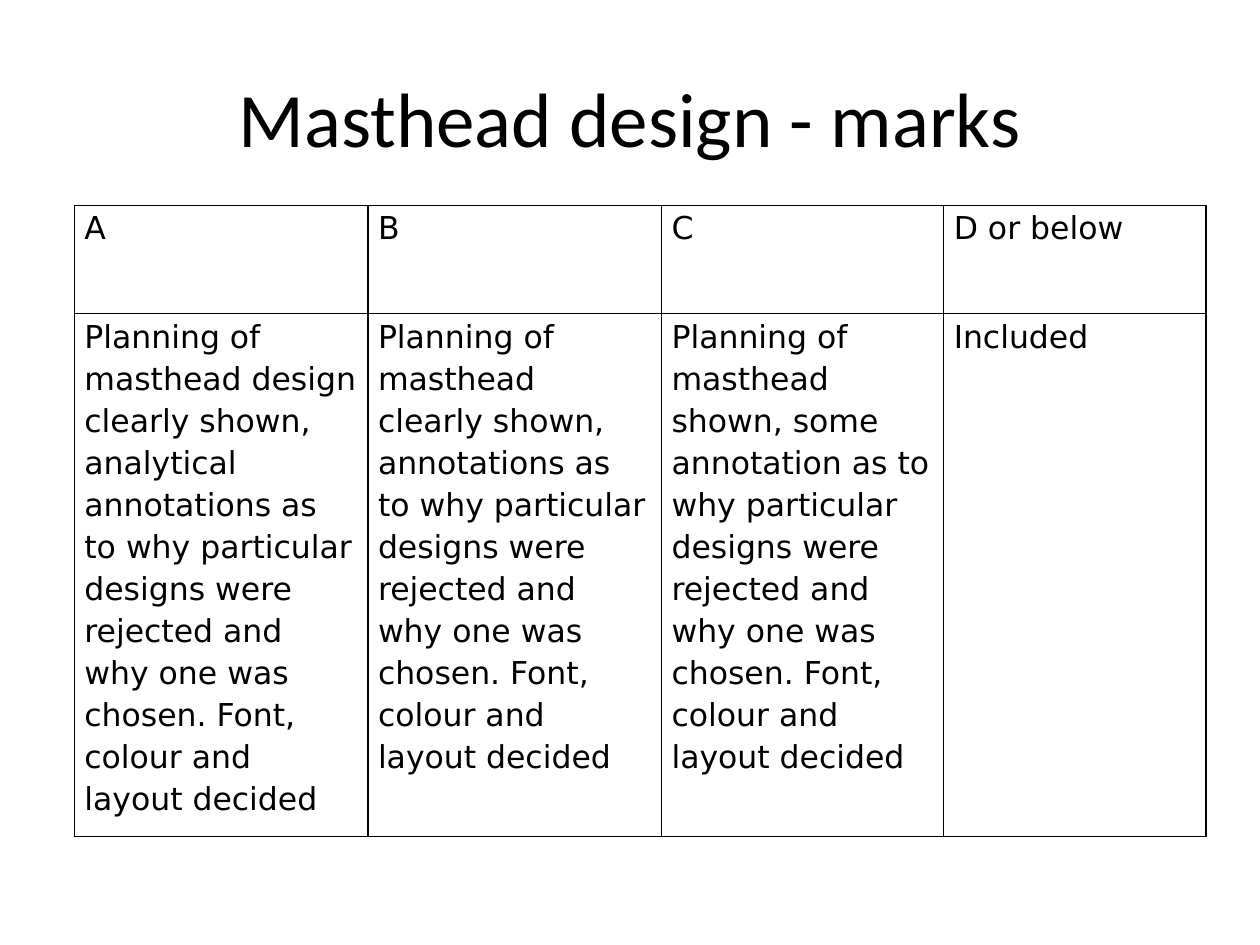
from dataclasses import dataclass

from lxml import etree
from pptx import Presentation
from pptx.dml.color import RGBColor
from pptx.enum.text import MSO_ANCHOR, PP_ALIGN
from pptx.oxml.ns import qn
from pptx.util import Inches, Pt

CENTER, LEFT = PP_ALIGN.CENTER, PP_ALIGN.LEFT
MIDDLE, TOP = MSO_ANCHOR.MIDDLE, MSO_ANCHOR.TOP


@dataclass(frozen=True)
class Theme:
    ink: str = "000000"
    paper: str = "FFFFFF"
    head: str = "Calibri"
    body: str = "DejaVu Sans"
    big: int = 44
    small: int = 18
    rule: int = 1


@dataclass(frozen=True)
class Grade:
    name: str
    width: float
    text: str


THEME = Theme()
ENDING = "particular designs were rejected and why one was chosen. Font, colour and layout decided"
GRADES = [
    Grade("A", 2.33, f"Planning of masthead design clearly shown, analytical annotations as to why {ENDING}"),
    Grade("B", 2.33, f"Planning of masthead clearly shown, annotations as to why {ENDING}"),
    Grade("C", 2.24, f"Planning of masthead shown, some annotation as to why {ENDING}"),
    Grade("D or below", 2.08, "Included"),
]
HEIGHTS = [0.86, 4.15]


def put_text(frame, text: str, *, font: str, size: int, align=LEFT,
             space: float = 1, after: float = 0, indent: float = 0) -> None:
    frame.word_wrap = True
    par = frame.paragraphs[0]
    par.alignment, par.line_spacing, par.space_after = align, space, Pt(after)
    if indent:
        props = par._p.get_or_add_pPr()
        props.set("marL", str(Inches(indent)))
        props.set("indent", "0")
    run = par.add_run()
    run.text = text
    run.font.name, run.font.size = font, Pt(size)
    run.font.color.rgb = RGBColor.from_string(THEME.ink)


def add_rules(cell) -> None:
    props = cell._tc.get_or_add_tcPr()
    for side in ("lnL", "lnR", "lnT", "lnB"):
        line = etree.SubElement(props, qn(f"a:{side}"), w=str(Pt(THEME.rule)))
        fill = etree.SubElement(line, qn("a:solidFill"))
        etree.SubElement(fill, qn("a:srgbClr"), val=THEME.ink)


def fill_cell(cell, text: str) -> None:
    cell.margin_left = cell.margin_top = cell.margin_bottom = 0
    cell.margin_right = Inches(0.09)
    cell.vertical_anchor = TOP
    add_rules(cell)
    cell.fill.solid()
    cell.fill.fore_color.rgb = RGBColor.from_string(THEME.paper)
    put_text(cell.text_frame, text, font=THEME.body, size=THEME.small,
             space=1.15, after=10, indent=0.08)


def add_title(slide, text: str) -> None:
    title = slide.shapes.title
    title.left, title.top = Inches(0.5), Inches(0.3)
    title.width, title.height = Inches(9), Inches(1.25)
    title.text_frame.vertical_anchor = MIDDLE
    put_text(title.text_frame, text, font=THEME.head, size=THEME.big, align=CENTER)


def add_grades(slide, grades: list[Grade]) -> None:
    width = sum(grade.width for grade in grades)
    table = slide.shapes.add_table(
        len(HEIGHTS), len(grades), Inches(0.59), Inches(1.63),
        Inches(width), Inches(sum(HEIGHTS))).table
    table.first_row = table.horz_banding = False
    for row, height in zip(table.rows, HEIGHTS):
        row.height = Inches(height)
    for col, grade in enumerate(grades):
        table.columns[col].width = Inches(grade.width)
        for row, text in enumerate((grade.name, grade.text)):
            fill_cell(table.cell(row, col), text)


def main() -> None:
    deck = Presentation()
    deck.slide_width, deck.slide_height = Inches(10), Inches(7.5)
    slide = deck.slides.add_slide(deck.slide_layouts[5])
    add_title(slide, "Masthead design - marks")
    add_grades(slide, GRADES)
    deck.save("out.pptx")


if __name__ == "__main__":
    main()
